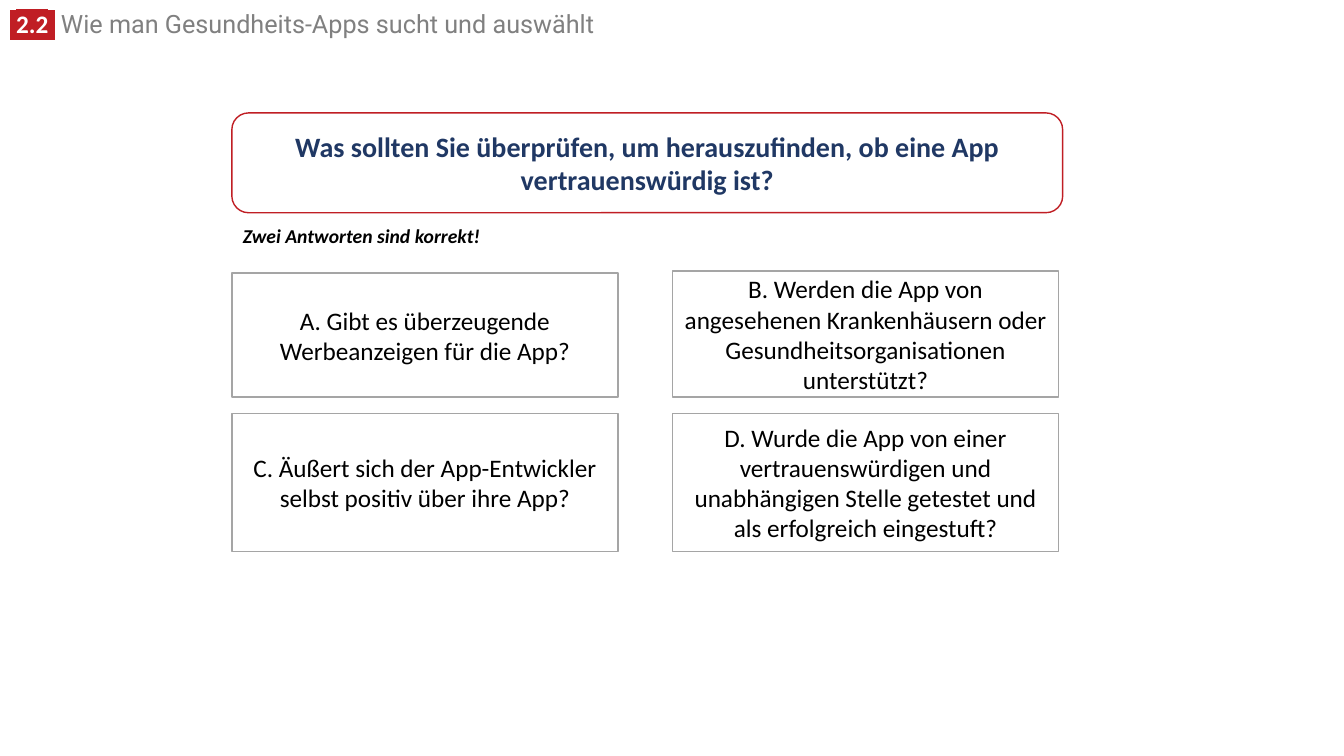
from lxml import etree
from pptx import Presentation
from pptx.dml.color import RGBColor
from pptx.enum.shapes import MSO_SHAPE
from pptx.enum.text import MSO_ANCHOR, MSO_AUTO_SIZE, PP_ALIGN
from pptx.oxml.ns import qn
from pptx.util import Inches, Pt

RECT = MSO_SHAPE.RECTANGLE
ROUND = MSO_SHAPE.ROUNDED_RECTANGLE
CENTER = PP_ALIGN.CENTER
MIDDLE = MSO_ANCHOR.MIDDLE
GROW = MSO_AUTO_SIZE.SHAPE_TO_FIT_TEXT

RED, NAVY, GRAY, SILVER = "C01E24", "203864", "808080", "A5A5A5"
WHITE, BLACK = "FFFFFF", "000000"


def color(code):
    return RGBColor.from_string(code)


class Quiz:
    font = "Calibri"
    head = "Roboto"

    def __init__(self, slide):
        self.slide = slide

    def run(self, para, text, size, tone, bold=False, italic=None, font=None, mark=None):
        run = para.add_run()
        run.text = text
        run.font.size = Pt(size)
        run.font.bold = bold
        run.font.italic = italic
        run.font.color.rgb = color(tone)
        run.font.name = font or self.font
        if mark:
            light = etree.Element(qn("a:highlight"))
            etree.SubElement(light, qn("a:srgbClr"), val=mark)
            run.font._element.find(qn("a:solidFill")).addnext(light)

    def label(self, left, top, width, height, wrap=True):
        box = self.slide.shapes.add_textbox(
            Inches(left), Inches(top), Inches(width), Inches(height))
        frame = box.text_frame
        frame.word_wrap = wrap
        frame.auto_size = GROW
        return frame.paragraphs[0]

    def card(self, kind, left, top, width, height, edge, text, size, tone, bold=False):
        card = self.slide.shapes.add_shape(
            kind, Inches(left), Inches(top), Inches(width), Inches(height))
        card.shadow.inherit = False
        card.fill.solid()
        card.fill.fore_color.rgb = color(WHITE)
        card.line.color.rgb = color(edge)
        card.line.width = Pt(1)
        frame = card.text_frame
        frame.word_wrap = True
        frame.vertical_anchor = MIDDLE
        para = frame.paragraphs[0]
        para.alignment = CENTER
        self.run(para, text, size, tone, bold)


def main():
    deck = Presentation()
    deck.slide_width = Inches(13.33)
    deck.slide_height = Inches(7.5)
    quiz = Quiz(deck.slides.add_slide(deck.slide_layouts[6]))

    title = quiz.label(0, 0.09, 9.52, 0.35)
    title.line_spacing = 0.8
    for text, font in ((" ", quiz.head), ("2.2", quiz.font), (" ", quiz.head)):
        quiz.run(title, text, 18, WHITE, True, font=font, mark=RED)
    quiz.run(title, " Wie man Gesundheits-Apps sucht und auswählt", 18, GRAY, font=quiz.head)

    quiz.card(ROUND, 2.3, 1.12, 8.24, 0.99, RED,
              "Was sollten Sie überprüfen, um herauszufinden, ob eine App "
              "vertrauenswürdig ist?", 20, NAVY, True)

    hint = quiz.label(2.31, 2.17, 2.57, 0.34, wrap=False)
    quiz.run(hint, "Zwei Antworten sind korrekt!", 14, BLACK, True, True)

    left, right = 2.3, 6.67
    answers = (
        (left, 2.71, 1.23, "A. Gibt es überzeugende Werbeanzeigen für die App?"),
        (right, 2.69, 1.25, "B. Werden die App von angesehenen Krankenhäusern oder "
                            "Gesundheitsorganisationen unterstützt?"),
        (left, 4.1, 1.37, "C. Äußert sich der App-Entwickler selbst positiv über ihre App?"),
        (right, 4.1, 1.37, "D. Wurde die App von einer vertrauenswürdigen und "
                           "unabhängigen Stelle getestet und als erfolgreich eingestuft?"),
    )
    for x, top, height, text in answers:
        quiz.card(RECT, x, top, 3.83, height, SILVER, text, 18, BLACK)

    deck.save("out.pptx")


if __name__ == "__main__":
    main()
